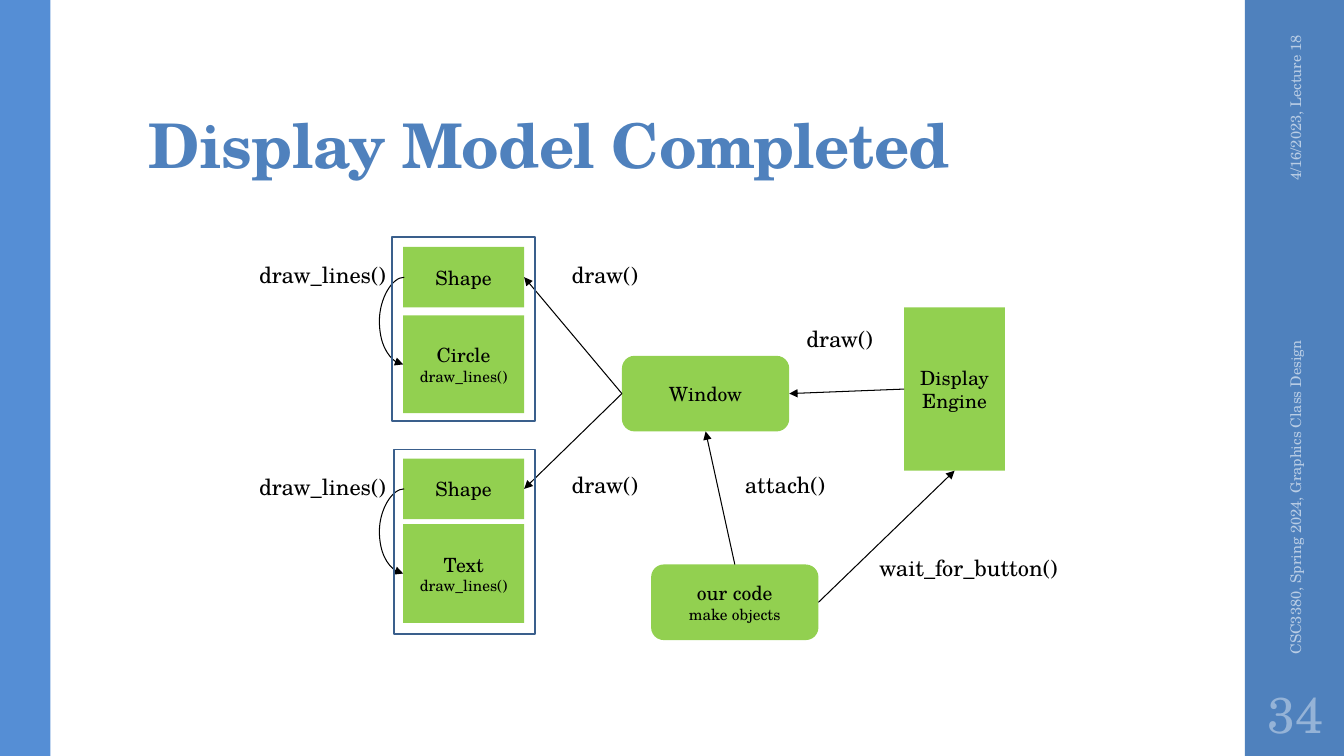
from lxml import etree
from pptx import Presentation
from pptx import util as u
from pptx.dml.color import RGBColor
from pptx.enum import shapes, text
from pptx.oxml.ns import qn

FONT = "TeX Gyre Schola"
CELL = u.Inches(0.1)
COLS, ROWS = 133.33, 75
COLORS = {
    "title": "4F81BD", "sidebar": "4F81BD", "strip": "558ED5",
    "footer": "B9CDE5", "number": "95B3D7", "node": "92D050",
    "frame": "3A5F8C", "ink": "000000",
}
RECT = shapes.MSO_SHAPE.RECTANGLE
ROUND = shapes.MSO_SHAPE.ROUNDED_RECTANGLE
LEFT, CENTER, RIGHT = text.PP_ALIGN.LEFT, text.PP_ALIGN.CENTER, text.PP_ALIGN.RIGHT
TOP, MIDDLE, BOTTOM = (text.MSO_ANCHOR.TOP, text.MSO_ANCHOR.MIDDLE,
                       text.MSO_ANCHOR.BOTTOM)
TIGHT = (0.7, 0.3, 0.7, 0.3)
ROOMY = (1, 0.5, 1, 0.5)
SIDE_TOP, SIDE_LEFT, SIDE_BOTTOM, SIDE_RIGHT = range(4)


def cells(*values):
    return [round(v * CELL) for v in values]


def color(name):
    return RGBColor.from_string(COLORS[name])


def write(sp, lines, ink="ink", align=LEFT, anchor=TOP, insets=TIGHT, wrap=True):
    tf = sp.text_frame
    tf.word_wrap = wrap
    tf.vertical_anchor = anchor
    (tf.margin_left, tf.margin_top,
     tf.margin_right, tf.margin_bottom) = cells(*insets)
    for i, (words, size) in enumerate(lines):
        p = tf.paragraphs[0] if i == 0 else tf.add_paragraph()
        p.alignment = align
        r = p.add_run()
        r.text = words
        r.font.name = FONT
        r.font.size = u.Pt(size)
        r.font.color.rgb = color(ink)
    return tf


def box(s, at, fill=None, line=None, kind=RECT):
    sp = s.shapes.add_shape(kind, *cells(*at))
    sp.shadow.inherit = False
    if fill:
        sp.fill.solid()
        sp.fill.fore_color.rgb = color(fill)
    else:
        sp.fill.background()
    if line:
        sp.line.color.rgb = color(line)
        sp.line.width = u.Pt(1.1)
    else:
        sp.line.fill.background()
    return sp


def node(s, at, name, detail=(), kind=RECT, wrap=True):
    sp = box(s, at, "node", kind=kind)
    lines = [(words, 14) for words in name] + [(words, 11) for words in detail]
    write(sp, lines, align=CENTER, anchor=MIDDLE, wrap=wrap)
    return sp


def label(s, at, words, size=16, rotation=0, **style):
    sp = s.shapes.add_textbox(*cells(*at))
    sp.rotation = rotation
    return write(sp, [(words, size)], **style)


def style_arrow(cx):
    cx.line.color.rgb = color("ink")
    cx.line.width = u.Pt(0.75)
    etree.SubElement(cx.line._get_or_add_ln(), qn("a:tailEnd"), type="triangle")
    etree.SubElement(cx._element.spPr, qn("a:effectLst"))


def arrow(s, start, start_side, end, end_side):
    cx = s.shapes.add_connector(shapes.MSO_CONNECTOR.STRAIGHT, 0, 0, 0, 0)
    cx.begin_connect(start, start_side)
    cx.end_connect(end, end_side)
    style_arrow(cx)


def loop(s, x, top, bottom):
    cx = s.shapes.add_connector(shapes.MSO_CONNECTOR.CURVE,
                                *cells(x, bottom, x + 0.1, top))
    spPr = cx._element.spPr
    spPr.find(qn("a:xfrm")).set("rot", "10800000")
    avLst = spPr.find(qn("a:prstGeom")).get_or_add_avLst()
    etree.SubElement(avLst, qn("a:gd"), name="adj1", fmla="val 2500000")
    style_arrow(cx)


def stack(s, top, name, gap, height):
    child_top = top + 6 + gap
    parent = node(s, (40, top, 12, 6), ["Shape"])
    node(s, (40, child_top, 12, height), [name], ["draw_lines()"])
    loop(s, 40, top + 3, child_top + height / 2)
    label(s, (25, top + 1.1, 14.2, 3.4), "draw_lines()", wrap=False)
    return parent


def page(s):
    box(s, (123.5, 0, COLS - 123.5, ROWS), "sidebar")
    box(s, (0, 0, 5, ROWS), "strip")
    tf = label(s, (13.8, 3.2, 106, 15.3), "Display Model Completed", 44,
               ink="title", anchor=BOTTOM, insets=(1, 0.3, 1, 0.5))
    p = tf.paragraphs[0]
    p.line_spacing = 0.9
    p.runs[0].font.bold = True
    p.runs[0].font._element.set("spc", "-50")
    label(s, (118.1, 10.9, 20.8, 4), "4/16/2023, Lecture 18", 10.5, 270,
          ink="footer", align=RIGHT, anchor=MIDDLE, insets=ROOMY)
    label(s, (108.9, 44.3, 39.2, 4), "CSC3380, Spring 2024, Graphics Class Design",
          10.5, 270, ink="footer", anchor=MIDDLE, insets=ROOMY)
    label(s, (123.5, 67.5, 10, 6.5), "34", 36, ink="number", align=CENTER,
          anchor=MIDDLE, insets=(0.5,) * 4)


def diagram(s):
    circle_shape = stack(s, 24.5, "Circle", 0.8, 9.7)
    text_shape = stack(s, 45.5, "Text", 0.5, 9.8)
    window = node(s, (61.7, 35.3, 16.6, 7.5), ["Window"], kind=ROUND)
    code = node(s, (64.6, 56, 16.6, 7.5), ["our code"], ["make objects"], ROUND)
    engine = node(s, (89.7, 30.5, 10, 16.2), ["Display", "Engine"], wrap=False)

    arrow(s, code, SIDE_TOP, window, SIDE_BOTTOM)
    arrow(s, code, SIDE_RIGHT, engine, SIDE_BOTTOM)
    arrow(s, engine, SIDE_LEFT, window, SIDE_RIGHT)
    for shape in (circle_shape, text_shape):
        arrow(s, window, SIDE_LEFT, shape, SIDE_RIGHT)

    for left, top in ((56, 25.6), (56, 46.4), (79.3, 32)):
        label(s, (left, top, 8.5, 3.4), "draw()", wrap=False)
    label(s, (86.5, 54.7, 20.2, 4.5), "wait_for_button()", wrap=False)
    label(s, (72.9, 46.3, 10.8, 3.7), "attach()", insets=ROOMY)

    box(s, (38.9, 23.5, 14.2, 18.3), line="frame")
    box(s, (39.1, 44.6, 14, 18.3), line="frame")


def main():
    prs = Presentation()
    prs.slide_width, prs.slide_height = cells(COLS, ROWS)
    s = prs.slides.add_slide(prs.slide_layouts[6])
    page(s)
    diagram(s)
    prs.save("out.pptx")


if __name__ == "__main__":
    main()
